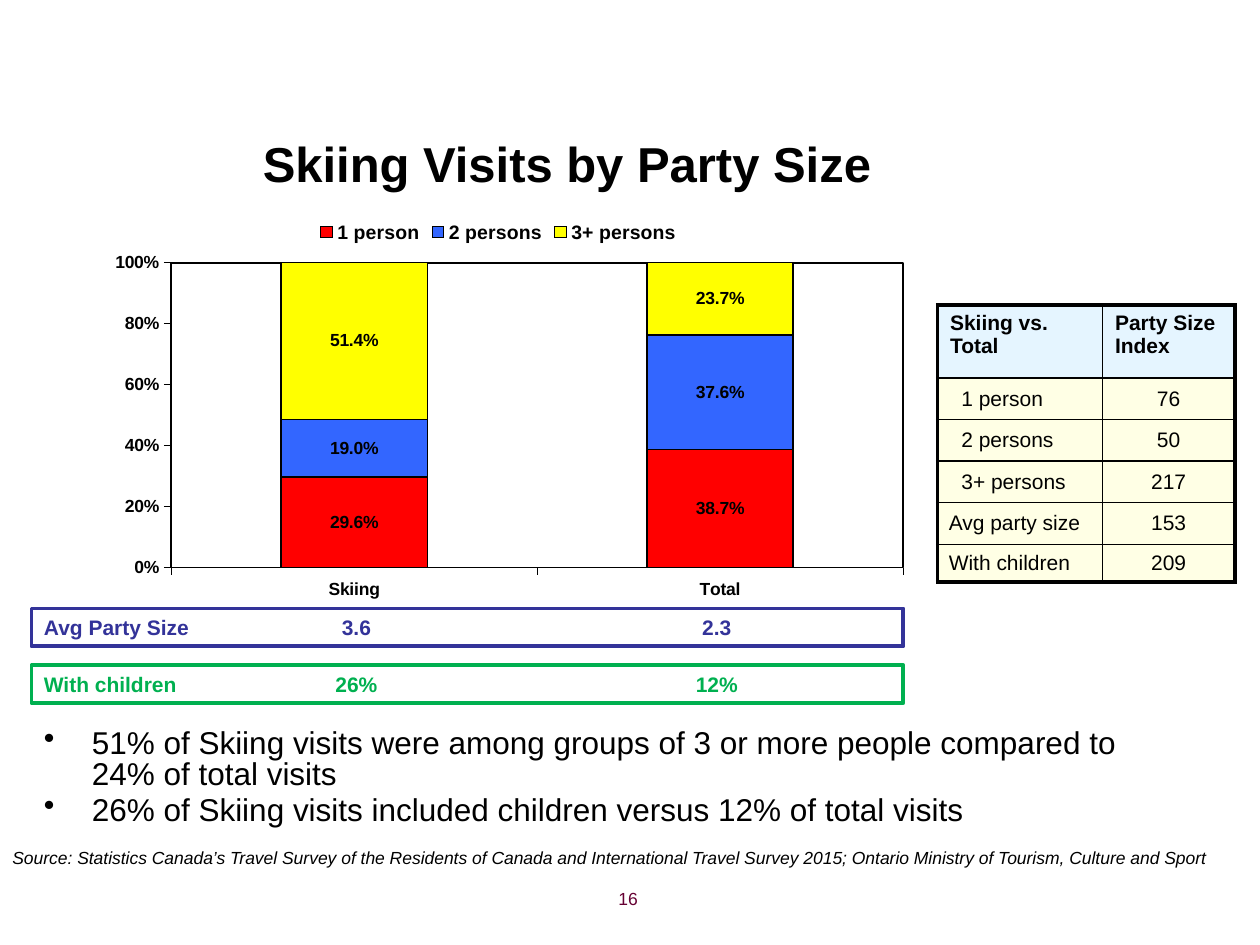
from lxml import etree
from pptx import Presentation
from pptx.chart.data import CategoryChartData
from pptx.dml.color import RGBColor
from pptx.enum.chart import XL_CHART_TYPE, XL_LEGEND_POSITION, XL_TICK_MARK
from pptx.enum.shapes import MSO_SHAPE
from pptx.enum.text import MSO_ANCHOR, PP_ALIGN
from pptx.oxml import parse_xml
from pptx.oxml.ns import nsdecls, qn
from pptx.util import Inches, Pt

# Content
TITLE = "Skiing Visits by Party Size"
VISITS = ["Skiing", "Total"]
PARTY_SIZES = [
    ("1 person", "FF0000", (0.296, 0.387)),
    ("2 persons", "3366FF", (0.19, 0.376)),
    ("3+ persons", "FFFF00", (0.514, 0.237)),
]
SUMMARIES = [
    ("333399", ("Avg Party Size", "3.6", "2.3")),
    ("00B050", ("With children", "26%", "12%")),
]
INDEX_HEADER = ("Skiing vs. Total", "Party Size Index")
INDEX_ROWS = [  # label, index, left inset
    ("1 person", "76", 0.19),
    ("2 persons", "50", 0.19),
    ("3+ persons", "217", 0.19),
    ("Avg party size", "153", 0.09),
    ("With children", "209", 0.09),
]
FINDINGS = [
    "51% of Skiing visits were among groups of 3 or more people compared to "
    "24% of total visits",
    "26% of Skiing visits included children versus 12% of total visits",
]
SOURCE = ("Source: Statistics Canada’s Travel Survey of the Residents of Canada and "
          "International Travel Survey 2015; Ontario Ministry of Tourism, Culture and Sport")
PAGE = "16"
BLACK = "000000"


def color(value):
    return RGBColor.from_string(value)


def style(font, size, value=BLACK, bold=False, italic=False):
    font.name, font.size, font.bold, font.italic = "Arial", Pt(size), bold, italic
    font.color.rgb = color(value)


def outline(line, width, value=BLACK):
    line.color.rgb = color(value)
    line.width = Pt(width)


def add_run(paragraph, text, *args, **kwargs):
    run = paragraph.add_run()
    run.text = text
    style(run.font, *args, **kwargs)


def add_box(slide, left, top, width, height):
    frame = slide.shapes.add_textbox(
        Inches(left), Inches(top), Inches(width), Inches(height)).text_frame
    frame.word_wrap = True
    return frame


def add_chart(slide):
    data = CategoryChartData(number_format="0.0%")
    data.categories = VISITS
    for name, _, shares in PARTY_SIZES:
        data.add_series(name, shares)
    chart = slide.shapes.add_chart(
        XL_CHART_TYPE.COLUMN_STACKED_100, Inches(0.67), Inches(1.64),
        Inches(6.57), Inches(3.8), data).chart
    style(chart.font, 10, bold=True)
    chart.has_title = False
    chart.has_legend = True
    chart.legend.position = XL_LEGEND_POSITION.TOP
    chart.legend.include_in_layout = False
    style(chart.legend.font, 11.1, bold=True)

    for axis in (chart.category_axis, chart.value_axis):
        axis.major_tick_mark = XL_TICK_MARK.OUTSIDE
        axis.has_major_gridlines = False
        style(axis.tick_labels.font, 10, bold=True)
        outline(axis.format.line, 0.25)
    shares_axis = chart.value_axis
    shares_axis.minimum_scale, shares_axis.maximum_scale = 0, 1
    shares_axis.major_unit = 0.2
    shares_axis.tick_labels.number_format = "0%"
    shares_axis.tick_labels.number_format_is_linked = False

    plot = chart.plots[0]
    plot.gap_width, plot.overlap, plot.vary_by_categories = 150, 100, False
    for series, (_, fill, _) in zip(plot.series, PARTY_SIZES):
        series.format.fill.solid()
        series.format.fill.fore_color.rgb = color(fill)
        outline(series.format.line, 1)
        labels = series.data_labels
        labels.show_value = True
        labels.number_format = "0.0%"
        labels.number_format_is_linked = False
        style(labels.font, 10, bold=True)

    # Fixed plot rectangle with a black frame
    area = chart._chartSpace.chart.plotArea
    for old in area.findall(qn("c:layout")):
        area.remove(old)
    places = "".join(f'<c:{key} val="{value}"/>' for key, value in
                     (("x", 0.105), ("y", 0.117), ("w", 0.884), ("h", 0.637)))
    area.insert(0, parse_xml(
        f'<c:layout {nsdecls("c")}><c:manualLayout><c:layoutTarget val="inner"/>'
        f'<c:xMode val="edge"/><c:yMode val="edge"/>{places}</c:manualLayout></c:layout>'))
    area.append(parse_xml(
        f'<c:spPr {nsdecls("c", "a")}><a:noFill/><a:ln w="{Pt(1)}"><a:solidFill>'
        f'<a:srgbClr val="{BLACK}"/></a:solidFill></a:ln></c:spPr>'))


def dress_cell(cell, fill, thick_sides):
    cell.fill.solid()
    cell.fill.fore_color.rgb = color(fill)
    properties = cell._tc.get_or_add_tcPr()
    tint = properties.find(qn("a:solidFill")).find(qn("a:srgbClr"))
    etree.SubElement(tint, qn("a:alpha")).set("val", "50000")
    for place, side in enumerate("LRTB"):
        width = Pt(2.25 if side in thick_sides else 1)
        properties.insert(place, parse_xml(
            f'<a:ln{side} {nsdecls("a")} w="{width}"><a:solidFill>'
            f'<a:srgbClr val="{BLACK}"/></a:solidFill></a:ln{side}>'))


def add_index_table(slide):
    widths, heights = (1.31, 1.05), (0.58, 0.33, 0.33, 0.33, 0.33, 0.3)
    table = slide.shapes.add_table(
        len(heights), len(widths), Inches(7.44), Inches(2.42),
        Inches(sum(widths)), Inches(sum(heights))).table
    for column, width in zip(table.columns, widths):
        column.width = Inches(width)
    for row, height in zip(table.rows, heights):
        row.height = Inches(height)

    rows = [INDEX_HEADER] + [row[:2] for row in INDEX_ROWS]
    for r, texts in enumerate(rows):
        for c, text in enumerate(texts):
            cell = table.cell(r, c)
            header = r == 0
            if not header:
                cell.margin_left = Inches(0 if c else INDEX_ROWS[r - 1][2])
                cell.margin_right = cell.margin_top = cell.margin_bottom = 0
                cell.vertical_anchor = MSO_ANCHOR.MIDDLE
            paragraph = cell.text_frame.paragraphs[0]
            paragraph.alignment = PP_ALIGN.CENTER if c and not header else PP_ALIGN.LEFT
            add_run(paragraph, text, 12, bold=header)
            thick = ("R" if c else "L") + ("T" if header else "")
            thick += "B" if r == len(rows) - 1 else ""
            dress_cell(cell, "CCECFF" if header else "FFFFCC", thick)


def add_summary(slide, top, value, texts):
    bar = slide.shapes.add_shape(
        MSO_SHAPE.RECTANGLE, Inches(0.25), Inches(top), Inches(6.92), Inches(0.3))
    bar.shadow.inherit = False
    bar.fill.background()
    outline(bar.line, 2.25, value)
    bar.text_frame.vertical_anchor = MSO_ANCHOR.MIDDLE
    paragraph = bar.text_frame.paragraphs[0]
    paragraph.alignment = PP_ALIGN.LEFT
    # Centre each figure under its column
    stops = "".join(f'<a:tab pos="{Inches(x)}" algn="ctr"/>' for x in (2.48, 5.34))
    paragraph._p.get_or_add_pPr().append(
        parse_xml(f'<a:tabLst {nsdecls("a")}>{stops}</a:tabLst>'))
    add_run(paragraph, "\t".join(texts), 12, value, bold=True)


def add_findings(slide):
    frame = add_box(slide, 0.25, 5.75, 8.98, 0.75)
    for i, text in enumerate(FINDINGS):
        paragraph = frame.add_paragraph() if i else frame.paragraphs[0]
        properties = paragraph._p.get_or_add_pPr()
        properties.set("marL", str(Inches(0.38)))
        properties.set("indent", str(-Inches(0.38)))
        properties.append(parse_xml(f'<a:buChar {nsdecls("a")} char="•"/>'))
        paragraph.line_spacing = 0.8
        if i:
            paragraph.space_before = Pt(3.6)
        add_run(paragraph, text, 18)


def main():
    deck = Presentation()
    deck.slide_width, deck.slide_height = Inches(10), Inches(7.5)
    slide = deck.slides.add_slide(deck.slide_layouts[6])

    # Title
    title = add_box(slide, 0, 0.97, 9, 0.69)
    title.vertical_anchor = MSO_ANCHOR.MIDDLE
    title.margin_bottom = Inches(0.1)
    title.paragraphs[0].alignment = PP_ALIGN.CENTER
    add_run(title.paragraphs[0], TITLE, 28, bold=True)

    # Chart, index table, summary bars and findings
    add_chart(slide)
    add_index_table(slide)
    for i, (value, texts) in enumerate(SUMMARIES):
        add_summary(slide, 4.83 + 0.45 * i, value, texts)
    add_findings(slide)

    # Source and page number
    source = add_box(slide, 0, 6.67, 9.8, 0.27)
    add_run(source.paragraphs[0], SOURCE, 10, italic=True)
    page = add_box(slide, 2.83, 7, 2.33, 0.35)
    page.paragraphs[0].alignment = PP_ALIGN.RIGHT
    add_run(page.paragraphs[0], PAGE, 10, "660033")

    deck.save("out.pptx")


if __name__ == "__main__":
    main()
